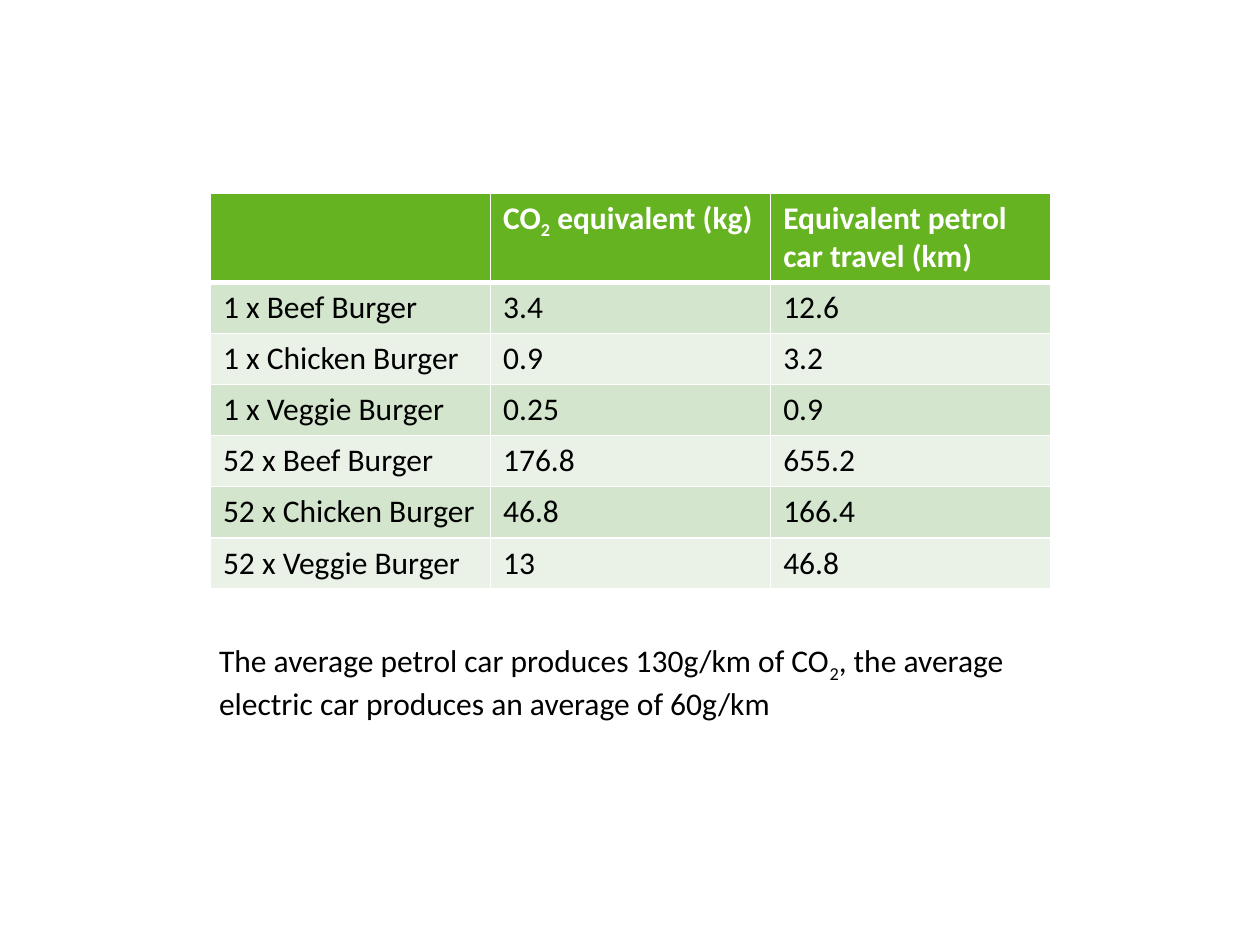
from dataclasses import dataclass

from lxml.etree import SubElement
from pptx import Presentation
from pptx.dml.color import RGBColor
from pptx.oxml.ns import qn
from pptx.util import Inches, Pt


@dataclass(frozen=True)
class Theme:
    font: str = "Calibri"
    size: int = 18
    text: str = "000000"
    header_text: str = "FFFFFF"
    header_fill: str = "66B322"
    bands: tuple = ("D3E5CD", "EAF2E8")
    border: str = "FFFFFF"
    thin: int = 1
    thick: int = 3


THEME = Theme()
SUBSCRIPT_MARK = "|"  # text between two marks is set as subscript

EMISSIONS = [
    ("", "CO|2| equivalent (kg)", "Equivalent petrol car travel (km)"),
    ("1 x Beef Burger", "3.4", "12.6"),
    ("1 x Chicken Burger", "0.9", "3.2"),
    ("1 x Veggie Burger", "0.25", "0.9"),
    ("52 x Beef Burger", "176.8", "655.2"),
    ("52 x Chicken Burger", "46.8", "166.4"),
    ("52 x Veggie Burger", "13", "46.8"),
]
CAR_NOTE = ("The average petrol car produces 130g/km of CO|2|, "
            "the average electric car produces an average of 60g/km")


def write_text(paragraph, text, color, bold=False):
    font_format = {"name": THEME.font, "size": Pt(THEME.size), "bold": bold}
    for index, piece in enumerate(text.split(SUBSCRIPT_MARK)):
        if not piece:
            continue
        run = paragraph.add_run()
        run.text = piece
        for attribute, value in font_format.items():
            setattr(run.font, attribute, value)
        run.font.color.rgb = RGBColor.from_string(color)
        if index % 2:
            run.font._element.set("baseline", "-25000")


def set_borders(cell, widths):
    properties = cell._tc.get_or_add_tcPr()
    for side, width in widths.items():
        line = SubElement(properties, qn(f"a:ln{side}"), w=str(Pt(width)))
        SubElement(SubElement(line, qn("a:solidFill")), qn("a:srgbClr"), val=THEME.border)


def format_cell(cell, text, row_index):
    is_header = row_index == 0
    # The header is parted from the body by a thicker line
    set_borders(cell, {
        "L": THEME.thin,
        "R": THEME.thin,
        "T": THEME.thick if row_index == 1 else THEME.thin,
        "B": THEME.thick if is_header else THEME.thin,
    })
    fill = THEME.header_fill if is_header else THEME.bands[(row_index - 1) % 2]
    cell.fill.solid()
    cell.fill.fore_color.rgb = RGBColor.from_string(fill)
    color = THEME.header_text if is_header else THEME.text
    write_text(cell.text_frame.paragraphs[0], text, color, bold=is_header)


def add_emissions_table(slide, left, top, width, height, header_height):
    row_count, column_count = len(EMISSIONS), len(EMISSIONS[0])
    table = slide.shapes.add_table(row_count, column_count, left, top, width, height).table
    body_height = (height - header_height) // (row_count - 1)
    for row_index, values in enumerate(EMISSIONS):
        table.rows[row_index].height = body_height if row_index else header_height
        for column_index, value in enumerate(values):
            format_cell(table.cell(row_index, column_index), value, row_index)


def add_note(slide, left, top, width, height, text):
    frame = slide.shapes.add_textbox(left, top, width, height).text_frame
    frame.word_wrap = True
    write_text(frame.paragraphs[0], text, THEME.text)


def main():
    presentation = Presentation()
    presentation.slide_width, presentation.slide_height = Inches(10), Inches(7.5)
    slide = presentation.slides.add_slide(presentation.slide_layouts[6])

    # Burger emissions
    add_emissions_table(slide, Inches(1.67), Inches(1.53), Inches(6.67), Inches(3.13),
                        header_height=Inches(0.7))
    # Car emissions for comparison
    add_note(slide, Inches(1.64), Inches(5.04), Inches(6.68), Inches(0.71), CAR_NOTE)

    presentation.save("out.pptx")


if __name__ == "__main__":
    main()
